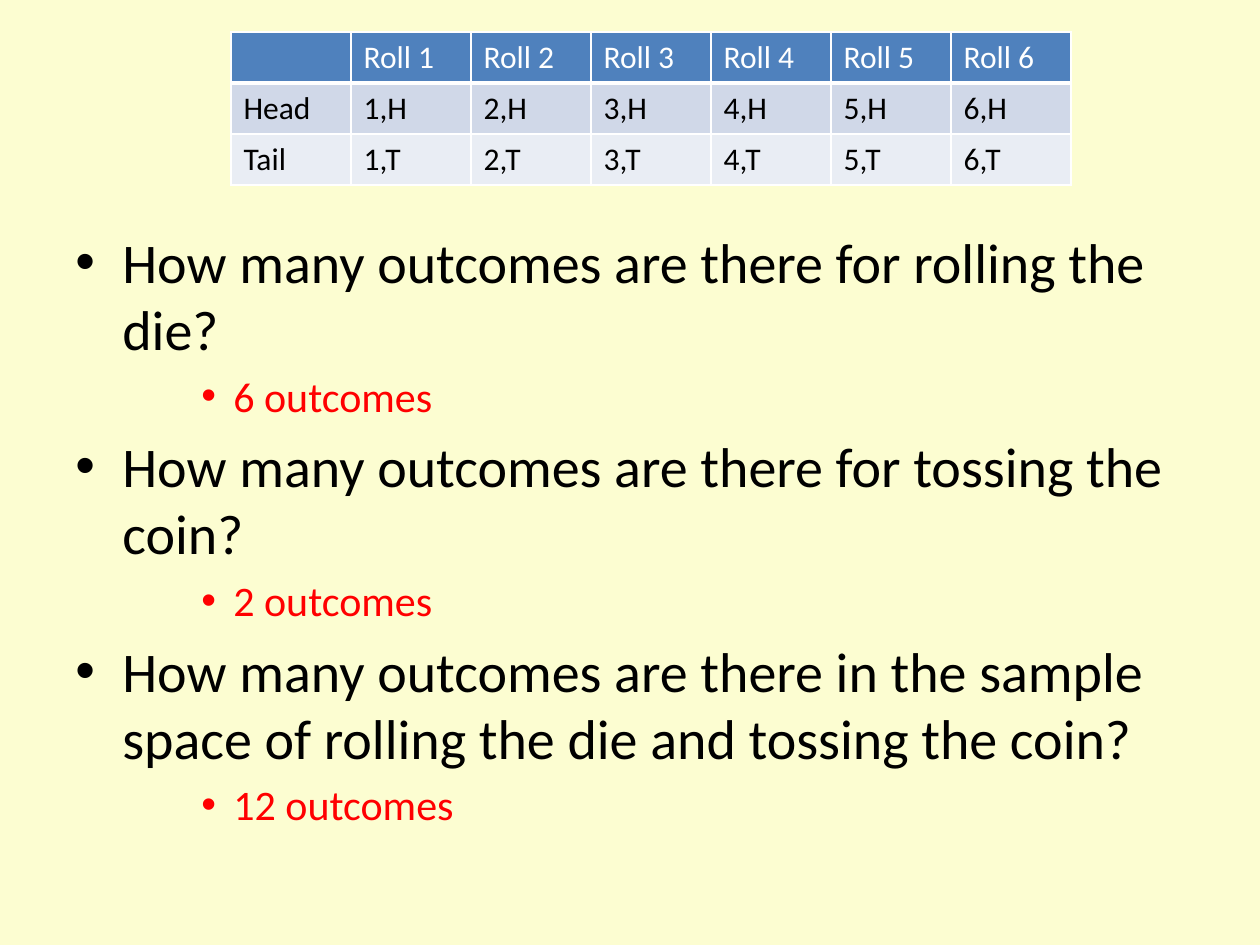
from dataclasses import dataclass

from lxml import etree
from pptx import Presentation
from pptx.dml.color import RGBColor
from pptx.oxml.ns import qn
from pptx.util import Emu, Pt

SCALE = 914400 / 126


@dataclass(frozen=True)
class Theme:
    """Hold the colours, font and type sizes of the slide."""
    page: str = "FCFDD1"
    head: str = "4F81BD"
    bands: tuple = ("D0D8E8", "E9EDF4")
    rule: str = "FFFFFF"
    light: str = "FFFFFF"
    ink: str = "000000"
    answer: str = "FF0000"
    font: str = "Calibri"
    ask_size: int = 32
    reply_size: int = 24
    cell_size: int = 18


THEME = Theme()
FACES = ("Head", "Tail")
ROLLS = range(1, 7)
QUIZ = (
    ("How many outcomes are there for rolling the die?", "6 outcomes"),
    ("How many outcomes are there for tossing the coin?", "2 outcomes"),
    ("How many outcomes are there in the sample space of rolling the die "
     "and tossing the coin?", "12 outcomes"),
)


def px(count):
    """Turn pixels into EMU."""
    return Emu(round(count * SCALE))


def add(parent, tag, **attrs):
    """Append a drawing element with the given attributes."""
    node = etree.SubElement(parent, qn(tag))
    for key, value in attrs.items():
        node.set(key, str(value))
    return node


def write(para, text, size, color, bold=False):
    """Add formatted text to a paragraph."""
    run = para.add_run()
    run.text = text
    font = run.font
    font.name = THEME.font
    font.size = Pt(size)
    font.bold = bold
    font.color.rgb = RGBColor.from_string(color)


def bullet(para, left, hang, level=0):
    """Give a paragraph its level, hanging bullet and space before."""
    para.level = level
    props = para._p.get_or_add_pPr()
    props.set("marL", str(px(left)))
    props.set("indent", str(-px(hang)))
    add(add(props, "a:spcBef"), "a:spcPct", val=20000)
    add(props, "a:buFont", typeface="Arial")
    add(props, "a:buChar", char="•")


def border(cell, base):
    """Rule the four sides of a cell, with its own width at the base."""
    props = cell._tc.get_or_add_tcPr()
    for side, width in (("L", 1), ("R", 1), ("T", 1), ("B", base)):
        line = add(props, f"a:ln{side}", w=Pt(width))
        add(add(line, "a:solidFill"), "a:srgbClr", val=THEME.rule)


def draw_grid(slide, left, top, width, height):
    """Draw the table of die and coin outcomes in the given box."""
    rows = [[""] + [f"Roll {roll}" for roll in ROLLS]]
    rows += [[face] + [f"{roll},{face[0]}" for roll in ROLLS] for face in FACES]
    fills = (THEME.head, *THEME.bands)
    count = len(rows[0])
    table = slide.shapes.add_table(
        len(rows), count, px(left), px(top), px(width), px(height)).table
    for col in table.columns:
        col.width = px(width // count)
    for r, (row, fill) in enumerate(zip(rows, fills)):
        table.rows[r].height = px(height // len(rows))
        for c, text in enumerate(row):
            cell = table.cell(r, c)
            border(cell, 1 if r else 3)
            cell.fill.solid()
            cell.fill.fore_color.rgb = RGBColor.from_string(fill)
            if text:
                write(cell.text_frame.paragraphs[0], text, THEME.cell_size,
                      THEME.ink if r else THEME.light)


def draw_quiz(slide, left, top, width, height):
    """Draw the questions and their answers in the given box."""
    box = slide.shapes.add_textbox(px(left), px(top), px(width), px(height))
    frame = box.text_frame
    frame.word_wrap = True
    for i, (ask, reply) in enumerate(QUIZ):
        para = frame.add_paragraph() if i else frame.paragraphs[0]
        bullet(para, 47, 47)
        write(para, ask, THEME.ask_size, THEME.ink)
        para = frame.add_paragraph()
        bullet(para, 158, 32, level=2)
        write(para, reply, THEME.reply_size, THEME.answer)


def main():
    """Build and save the slide."""
    deck = Presentation()
    deck.slide_width, deck.slide_height = px(1260), px(945)
    slide = deck.slides.add_slide(deck.slide_layouts[6])
    back = slide.background.fill
    back.solid()
    back.fore_color.rgb = RGBColor.from_string(THEME.page)
    draw_quiz(slide, 63, 221, 1134, 624)
    draw_grid(slide, 231, 32, 840, 153)
    deck.save("out.pptx")


if __name__ == "__main__":
    main()
